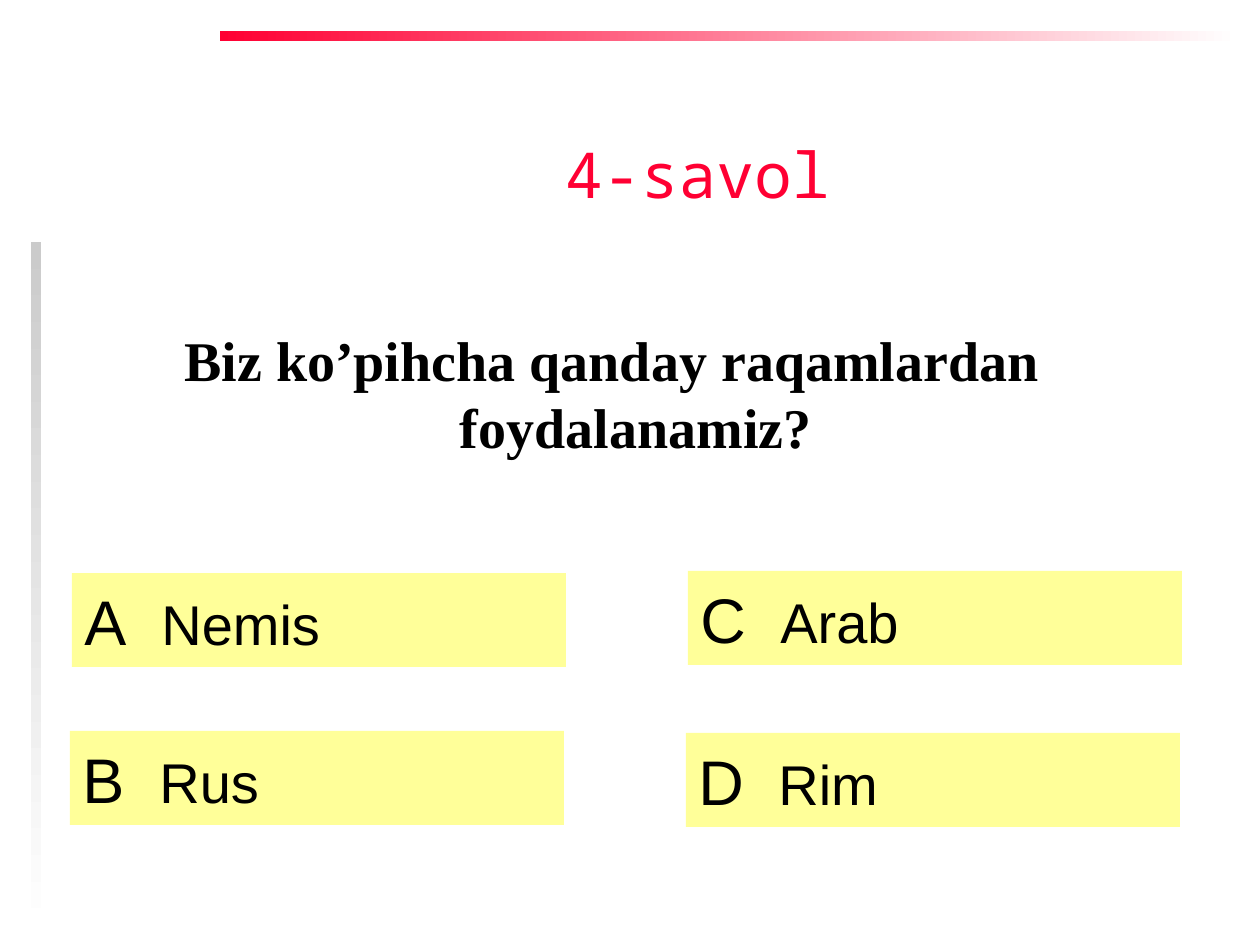
import pptx
import pptx.dml.color
import pptx.enum.shapes
import pptx.enum.text
import pptx.oxml.ns
import pptx.util
from lxml import etree

PX = 914400 // 126
RGB = pptx.dml.color.RGBColor.from_string
ALIGN = pptx.enum.text.PP_ALIGN
ANCHOR = pptx.enum.text.MSO_ANCHOR
RECTANGLE = pptx.enum.shapes.MSO_SHAPE.RECTANGLE

THEME = {
    "red": RGB("FF0033"),
    "grey": RGB("CBCBCB"),
    "white": RGB("FFFFFF"),
    "yellow": RGB("FFFF99"),
    "black": RGB("000000"),
    "large": pptx.util.Pt(36),
    "medium": pptx.util.Pt(32),
}


def place(box, left, top, width, height):
    box.left, box.top, box.width, box.height = (
        side * PX for side in (left, top, width, height))


def add_run(para, text, color, **font_format):
    span = para.add_run()
    span.text = text
    span.font.color.rgb = color
    for name, value in font_format.items():
        setattr(span.font, name, value)


deck = pptx.Presentation()
deck.slide_width = 1260 * PX
deck.slide_height = 945 * PX
page = deck.slides.add_slide(deck.slide_layouts[1])

# Fading bars along the top and left edges
bars = [
    (220, 31, 1018, 10, THEME["red"], 0),
    (31, 242, 10, 693, THEME["grey"], 270),
]
for left, top, width, height, color, angle in bars:
    bar = page.shapes.add_shape(RECTANGLE, 0, 0, 0, 0)
    place(bar, left, top, width, height)
    bar.shadow.inherit = False
    bar.line.fill.background()
    bar.fill.gradient()
    bar.fill.gradient_angle = angle
    for stop, stop_color in zip(bar.fill.gradient_stops, (color, THEME["white"])):
        stop.color.rgb = stop_color

# Question number
title = page.shapes.title
place(title, 533, 118, 329, 111)
title_para = title.text_frame.paragraphs[0]
title_para.alignment = ALIGN.CENTER
add_run(title_para, "4-savol", THEME["red"],
        name="Noto Sans Mono", size=THEME["large"])

# Question
question = page.placeholders[1]
place(question, 106, 319, 1012, 198)
question.text_frame.auto_size = pptx.enum.text.MSO_AUTO_SIZE.NONE
question_para = question.text_frame.paragraphs[0]
question_para.alignment = ALIGN.CENTER
question_para.space_before = pptx.util.Pt(0)
properties = question_para._p.get_or_add_pPr()
properties.set("marL", str(48 * PX))
properties.set("indent", str(-48 * PX))
etree.SubElement(properties, pptx.oxml.ns.qn("a:buNone"))
add_run(question_para, "Biz ko’pihcha qanday raqamlardan foydalanamiz?",
        THEME["black"], name="Times New Roman", size=THEME["medium"], bold=True)

# Answers: letter, text, left, top, tab position
answers = [
    ("А", "Nemis", 72, 573, 77),
    ("B", "Rus", 70, 731, 77),
    ("C", "Arab", 688, 571, 80),
    ("D", "Rim", 686, 733, 80),
]
for letter, answer, left, top, tab in answers:
    box = page.shapes.add_shape(RECTANGLE, 0, 0, 0, 0)
    place(box, left, top, 494, 94)
    box.shadow.inherit = False
    box.fill.solid()
    box.fill.fore_color.rgb = THEME["yellow"]
    box.line.fill.background()
    box.text_frame.word_wrap = True
    box.text_frame.vertical_anchor = ANCHOR.MIDDLE
    para = box.text_frame.paragraphs[0]
    para.alignment = ALIGN.LEFT
    tabs = etree.SubElement(para._p.get_or_add_pPr(), pptx.oxml.ns.qn("a:tabLst"))
    etree.SubElement(tabs, pptx.oxml.ns.qn("a:tab"), pos=str(tab * PX), algn="l")
    for text, size in ((letter + "\t", "large"), (answer, "medium")):
        add_run(para, text, THEME["black"], name="Arial", size=THEME[size])

deck.save("out.pptx")
